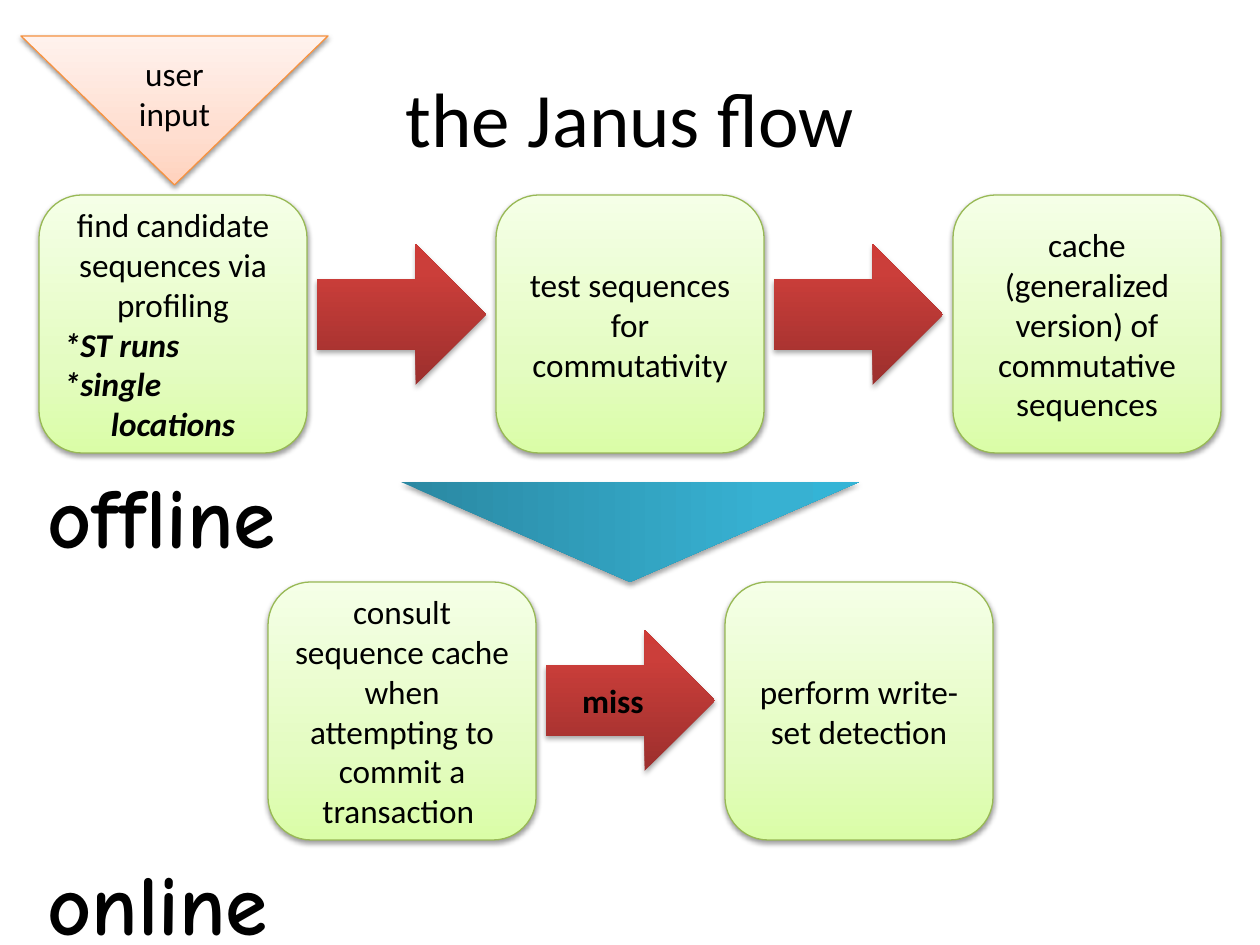
"""Build a slide showing the offline and online stages of a flow."""
from dataclasses import dataclass, field

from lxml import etree
from pptx import Presentation
from pptx import util as u
from pptx.dml.color import RGBColor
from pptx.enum import shapes, text
from pptx.oxml import ns

EMU_PER_PX = u.Inches(1) / 126
KIND = shapes.MSO_SHAPE


@dataclass(frozen=True)
class Paint:
    stops: tuple[tuple[int, str], ...]
    line: str | None
    shadow_alpha: int
    shadow_distance: float


@dataclass(frozen=True)
class Theme:
    body_font: str = "Calibri"
    label_font: str = "Comic Neue"
    ink: str = "000000"
    title_size: int = 44
    label_size: int = 49
    body_size: int = 19
    line_width: float = 0.75
    shadow_blur: float = 3.1
    green: Paint = Paint(((0, "DAFDA7"), (35, "E4FCC2"), (100, "F5FFE7")), "98B955", 38, 1.6)
    orange: Paint = Paint(((0, "FFD2BD"), (35, "FFDED0"), (100, "FFF2ED")), "F69240", 38, 1.6)
    red: Paint = Paint(((0, "9C2F2D"), (80, "CB3E3A"), (100, "CE3B37")), None, 35, 1.8)
    blue: Paint = Paint(((0, "2A88A2"), (80, "37B1D2"), (100, "34B4D6")), None, 35, 1.8)


THEME = Theme()


@dataclass(frozen=True)
class Frame:
    left: int
    top: int
    width: int
    height: int


@dataclass(frozen=True)
class Line:
    words: str
    size: int = THEME.body_size
    font: str = THEME.body_font
    bold: bool = False
    italic: bool = False
    centred: bool = True
    hanging: int = 0


@dataclass(frozen=True)
class Figure:
    kind: KIND
    frame: Frame
    paint: Paint
    lines: tuple[Line, ...] = ()
    rotation: int = 0
    adjustments: tuple[float, ...] = field(default=())
    top_inset: int = 6


def px(length: int) -> u.Emu:
    return u.Emu(round(length * EMU_PER_PX))


def place(frame: Frame) -> tuple[u.Emu, ...]:
    return px(frame.left), px(frame.top), px(frame.width), px(frame.height)


def add_colour(parent, colour: str):
    return etree.SubElement(parent, ns.qn("a:srgbClr"), val=colour)


def apply_paint(shape, paint: Paint) -> None:
    shape.fill.gradient()
    shape.fill.gradient_angle = 90
    properties = shape._element.spPr
    stops = properties.find(".//" + ns.qn("a:gsLst"))
    for stop in list(stops):
        stops.remove(stop)
    for position, colour in paint.stops:
        add_colour(etree.SubElement(stops, ns.qn("a:gs"), pos=str(position * 1000)), colour)
    if paint.line:
        shape.line.color.rgb = RGBColor.from_string(paint.line)
        shape.line.width = u.Pt(THEME.line_width)
    else:
        shape.line.fill.background()
    shape.shadow.inherit = False
    shadow = etree.SubElement(
        properties.find(ns.qn("a:effectLst")), ns.qn("a:outerShdw"),
        blurRad=str(u.Pt(THEME.shadow_blur)), dist=str(u.Pt(paint.shadow_distance)),
        dir="5400000", rotWithShape="0")
    etree.SubElement(add_colour(shadow, THEME.ink), ns.qn("a:alpha"),
                     val=str(paint.shadow_alpha * 1000))


def write_lines(box, lines: tuple[Line, ...], anchor: text.MSO_ANCHOR) -> None:
    frame = box.text_frame
    frame.word_wrap = True
    frame.vertical_anchor = anchor
    for index, line in enumerate(lines):
        para = frame.add_paragraph() if index else frame.paragraphs[0]
        para.alignment = text.PP_ALIGN.CENTER if line.centred else text.PP_ALIGN.LEFT
        if line.hanging:
            settings = para._p.get_or_add_pPr()
            settings.set("marL", str(px(line.hanging)))
            settings.set("indent", str(-px(line.hanging)))
        span = para.add_run()
        span.text = line.words
        span.font.name = line.font
        span.font.size = u.Pt(line.size)
        span.font.bold = line.bold
        span.font.italic = line.italic
        span.font.color.rgb = RGBColor.from_string(THEME.ink)


def draw_figure(page, figure: Figure) -> None:
    shape = page.shapes.add_shape(figure.kind, *place(figure.frame))
    shape.rotation = figure.rotation
    for index, value in enumerate(figure.adjustments):
        shape.adjustments[index] = value
    apply_paint(shape, figure.paint)
    if figure.lines:
        shape.text_frame.margin_top = px(figure.top_inset)
        write_lines(shape, figure.lines, text.MSO_ANCHOR.MIDDLE)


def draw_text(page, frame: Frame, line: Line, anchor: text.MSO_ANCHOR) -> None:
    write_lines(page.shapes.add_textbox(*place(frame)), (line,), anchor)


def draw_row(page, left: int, top: int, arrow_drop: int,
             steps: tuple[tuple[Line, ...], ...], arrow_lines: tuple[Line, ...] = ()) -> None:
    width, height, pitch, gap = 268, 258, 457, 10
    for index, lines in enumerate(steps):
        x = left + index * pitch
        draw_figure(page, Figure(KIND.ROUNDED_RECTANGLE, Frame(x, top, width, height),
                                 THEME.green, lines))
        if index < len(steps) - 1:
            arrow = Frame(x + width + gap, top + arrow_drop, pitch - width - 2 * gap, 141)
            draw_figure(page, Figure(KIND.RIGHT_ARROW, arrow, THEME.red, arrow_lines))


def detail(words: str) -> Line:
    return Line(words, bold=True, italic=True, centred=False, hanging=47)


def main() -> None:
    deck = Presentation()
    deck.slide_width, deck.slide_height = px(1260), px(945)
    page = deck.slides.add_slide(deck.slide_layouts[6])
    draw_text(page, Frame(63, 38, 1134, 157), Line("the Janus flow", THEME.title_size),
              text.MSO_ANCHOR.MIDDLE)
    draw_row(page, 39, 195, 49, (
        (Line("find candidate sequences via profiling"),
         detail("*ST runs"), detail("*single locations")),
        (Line("test sequences for commutativity"),),
        (Line("cache (generalized version) of commutative sequences"),)))
    draw_row(page, 268, 582, 48, (
        (Line("consult sequence cache when attempting to commit a transaction "),),
        (Line("perform write-set detection"),)), (Line("miss", bold=True),))
    for words, top in (("offline", 457), ("online", 844)):
        label = Line(words, THEME.label_size, THEME.label_font, bold=True, centred=False)
        draw_text(page, Frame(35, top, 377, 117), label, text.MSO_ANCHOR.TOP)
    draw_figure(page, Figure(KIND.RIGHT_ARROW, Frame(580, 303, 100, 458), THEME.blue,
                             rotation=90, adjustments=(0.72, 1)))
    draw_figure(page, Figure(KIND.FLOWCHART_MERGE, Frame(21, 36, 307, 149), THEME.orange,
                             (Line("user input"),), top_inset=46))
    deck.save("out.pptx")


if __name__ == "__main__":
    main()
